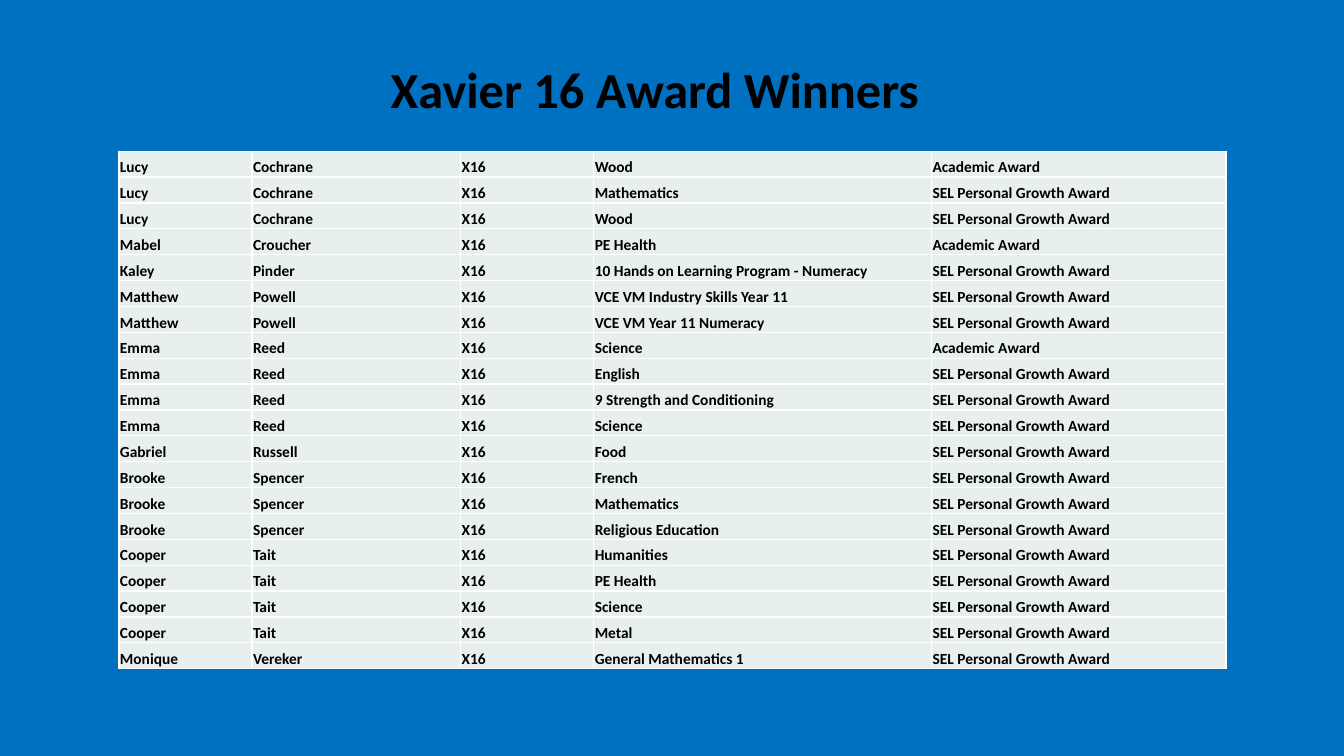
from lxml import etree
from pptx import Presentation
from pptx.dml.color import RGBColor
from pptx.enum.text import MSO_ANCHOR, PP_ALIGN
from pptx.oxml.ns import qn
from pptx.util import Inches, Pt

TOP = MSO_ANCHOR.TOP
BOTTOM = MSO_ANCHOR.BOTTOM
CENTER = PP_ALIGN.CENTER

CLASS_CODE = "X16"
ACADEMIC = "Academic Award"
GROWTH = "SEL Personal Growth Award"
COLUMN_WIDTHS = [1.32, 2.07, 1.32, 3.35, 2.92]
WINNERS = [
    ("Lucy", "Cochrane", [("Wood", ACADEMIC), ("Mathematics", GROWTH), ("Wood", GROWTH)]),
    ("Mabel", "Croucher", [("PE Health", ACADEMIC)]),
    ("Kaley", "Pinder", [("10 Hands on Learning Program - Numeracy", GROWTH)]),
    ("Matthew", "Powell", [("VCE VM Industry Skills Year 11", GROWTH),
                           ("VCE VM Year 11 Numeracy", GROWTH)]),
    ("Emma", "Reed", [("Science", ACADEMIC), ("English", GROWTH),
                      ("9 Strength and Conditioning", GROWTH), ("Science", GROWTH)]),
    ("Gabriel", "Russell", [("Food", GROWTH)]),
    ("Brooke", "Spencer", [("French", GROWTH), ("Mathematics", GROWTH),
                           ("Religious Education", GROWTH)]),
    ("Cooper", "Tait", [("Humanities", GROWTH), ("PE Health", GROWTH),
                        ("Science", GROWTH), ("Metal", GROWTH)]),
    ("Monique", "Vereker", [("General Mathematics 1", GROWTH)]),
]
CELL_FORMAT = {
    "vertical_anchor": BOTTOM,
    "margin_left": Inches(0.01),
    "margin_top": Inches(0.01),
    "margin_right": Inches(0.01),
    "margin_bottom": Inches(0),
}


def paint(color_format, hex_color):
    color_format.rgb = RGBColor.from_string(hex_color)


def write(paragraph, text, size):
    run = paragraph.add_run()
    run.text = text
    for attribute, value in {"name": "Calibri", "size": Pt(size), "bold": True}.items():
        setattr(run.font, attribute, value)
    paint(run.font.color, "000000")


prs = Presentation()
prs.slide_width = Inches(13.33)
prs.slide_height = Inches(7.5)
slide = prs.slides.add_slide(prs.slide_layouts[6])
slide.background.fill.solid()
paint(slide.background.fill.fore_color, "0070C0")

heading = slide.shapes.add_textbox(
    Inches(0.67), Inches(0.6), Inches(11.65), Inches(1.24)).text_frame
heading.word_wrap = True
heading.vertical_anchor = TOP
heading.paragraphs[0].alignment = CENTER
heading.paragraphs[0].line_spacing = 0.9
write(heading.paragraphs[0], "Xavier 16 Award Winners", 36)

award_rows = [
    (first_name, surname, CLASS_CODE, subject, award)
    for first_name, surname, awards in WINNERS
    for subject, award in awards
]
awards_table = slide.shapes.add_table(
    len(award_rows), len(COLUMN_WIDTHS),
    Inches(1.18), Inches(1.5), Inches(10.97), Inches(5.14)).table
awards_table.first_row = False
awards_table.horz_banding = False
for column, width in zip(awards_table.columns, COLUMN_WIDTHS):
    column.width = Inches(width)

for row, entries in zip(awards_table.rows, award_rows):
    for cell, entry in zip(row.cells, entries):
        for attribute, value in CELL_FORMAT.items():
            setattr(cell, attribute, value)
        cell_properties = cell._tc.get_or_add_tcPr()
        for side in ("a:lnL", "a:lnR", "a:lnT", "a:lnB"):
            border = etree.SubElement(cell_properties, qn(side), w=str(Pt(1)))
            border_fill = etree.SubElement(border, qn("a:solidFill"))
            etree.SubElement(border_fill, qn("a:srgbClr"), val="FFFFFF")
        cell.fill.solid()
        paint(cell.fill.fore_color, "E8EFEF")
        write(cell.text_frame.paragraphs[0], entry, 11)

prs.save("out.pptx")
